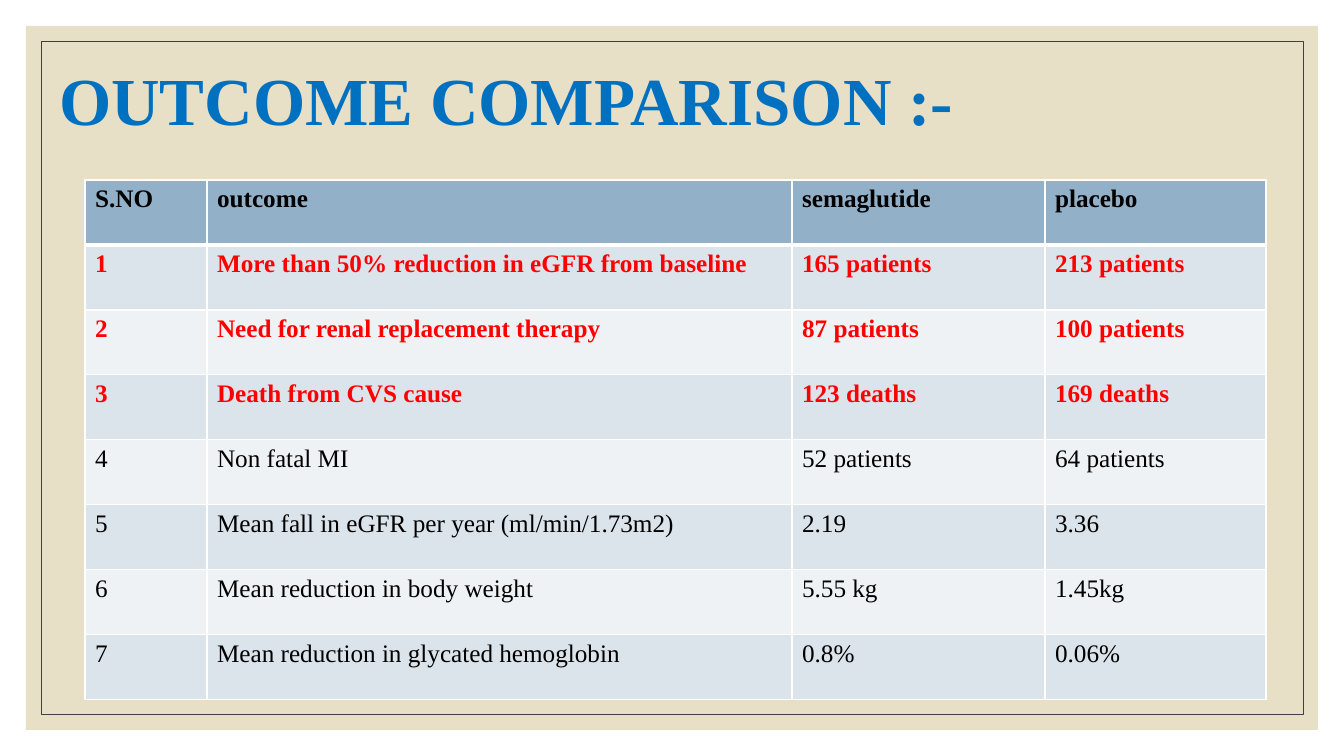
"""Build the outcome comparison slide: a framed panel, a title and a table."""
from dataclasses import dataclass

from lxml import etree
from pptx import Presentation
from pptx import util as u
from pptx.dml.color import RGBColor
from pptx.enum import shapes, text
from pptx.oxml.ns import qn

TITLE = "OUTCOME COMPARISON :-"
HEADER = ("S.NO", "outcome", "semaglutide", "placebo")
OUTCOMES = [
    ("More than 50% reduction in eGFR from baseline", "165 patients", "213 patients"),
    ("Need for renal replacement therapy", "87 patients", "100 patients"),
    ("Death from CVS cause", "123 deaths", "169 deaths"),
    ("Non fatal MI", "52 patients", "64 patients"),
    ("Mean fall in eGFR per year (ml/min/1.73m2)", "2.19", "3.36"),
    ("Mean reduction in body weight", "5.55 kg", "1.45kg"),
    ("Mean reduction in glycated hemoglobin", "0.8%", "0.06%"),
]
KEY_OUTCOMES = 3

SLIDE_SIZE = (1344, 756)
PANEL_BOX = (26, 26, 1292, 704)
FRAME_BOX = (41, 41, 1262, 673)
TITLE_BOX = (49, 28, 1109, 151)
TABLE_LEFT, TABLE_TOP, ROW_HEIGHT = 85, 180, 65
COLUMN_WIDTHS = (122, 585, 253, 221)
EMU_PER_PX = 914400 / 100.8


@dataclass(frozen=True)
class Theme:
    font: str = "Times New Roman"
    title_size: int = 48
    table_size: int = 18
    panel: str = "E7E0C7"
    frame: str = "404040"
    title: str = "0070C0"
    ink: str = "000000"
    key: str = "FF0000"
    header: str = "92B0C8"
    bands: tuple = ("DCE4EB", "EEF2F5")
    border: str = "FFFFFF"


THEME = Theme()


def px(length):
    return u.Emu(round(length * EMU_PER_PX))


def color(value):
    return RGBColor.from_string(value)


def style(para, size, ink, bold):
    for span in para.runs:
        span.font.name = THEME.font
        span.font.size = u.Pt(size)
        span.font.bold = bold
        span.font.color.rgb = color(ink)


def add_rectangle(page, bounds):
    box = page.shapes.add_shape(shapes.MSO_SHAPE.RECTANGLE, *map(px, bounds))
    box.shadow.inherit = False
    return box


def add_background(page):
    panel = add_rectangle(page, PANEL_BOX)
    panel.fill.solid()
    panel.fill.fore_color.rgb = color(THEME.panel)
    panel.line.fill.background()
    frame = add_rectangle(page, FRAME_BOX)
    frame.fill.background()
    frame.line.color.rgb = color(THEME.frame)
    frame.line.width = u.Pt(0.5)


def add_title(page):
    title = page.shapes.title
    title.left, title.top, title.width, title.height = map(px, TITLE_BOX)
    frame = title.text_frame
    frame.text = TITLE
    frame.word_wrap = True
    frame.auto_size = text.MSO_AUTO_SIZE.NONE
    frame.vertical_anchor = text.MSO_ANCHOR.MIDDLE
    para = frame.paragraphs[0]
    para.alignment = text.PP_ALIGN.LEFT
    para.line_spacing = 0.9
    style(para, THEME.title_size, THEME.title, True)
    page.shapes.element.append(title.element)


def set_borders(cell, top, bottom):
    properties = cell._tc.get_or_add_tcPr()
    widths = {"lnL": 1, "lnR": 1, "lnT": top, "lnB": bottom}
    for index, (side, width) in enumerate(widths.items()):
        line = etree.Element(qn(f"a:{side}"), w=str(u.Pt(width)))
        fill = etree.SubElement(line, qn("a:solidFill"))
        etree.SubElement(fill, qn("a:srgbClr"), val=THEME.border)
        properties.insert(index, line)


def add_outcome_table(page):
    rows = [HEADER] + [(str(n), *outcome) for n, outcome in enumerate(OUTCOMES, 1)]
    bounds = (TABLE_LEFT, TABLE_TOP, sum(COLUMN_WIDTHS), ROW_HEIGHT * len(rows))
    table = page.shapes.add_table(len(rows), len(HEADER), *map(px, bounds)).table
    for column, width in zip(table.columns, COLUMN_WIDTHS):
        column.width = px(width)
    for r, values in enumerate(rows):
        table.rows[r].height = px(ROW_HEIGHT)
        is_key = 1 <= r <= KEY_OUTCOMES
        fill = THEME.bands[(r - 1) % 2] if r else THEME.header
        for c, value in enumerate(values):
            cell = table.cell(r, c)
            cell.text_frame.text = value
            style(cell.text_frame.paragraphs[0], THEME.table_size,
                  THEME.key if is_key else THEME.ink, r <= KEY_OUTCOMES)
            cell.fill.solid()
            cell.fill.fore_color.rgb = color(fill)
            set_borders(cell, top=3 if r == 1 else 1, bottom=1 if r else 3)


def main():
    deck = Presentation()
    deck.slide_width, deck.slide_height = map(px, SLIDE_SIZE)
    page = deck.slides.add_slide(deck.slide_layouts.get_by_name("Title Only"))
    add_background(page)
    add_title(page)
    add_outcome_table(page)
    deck.save("out.pptx")


if __name__ == "__main__":
    main()
